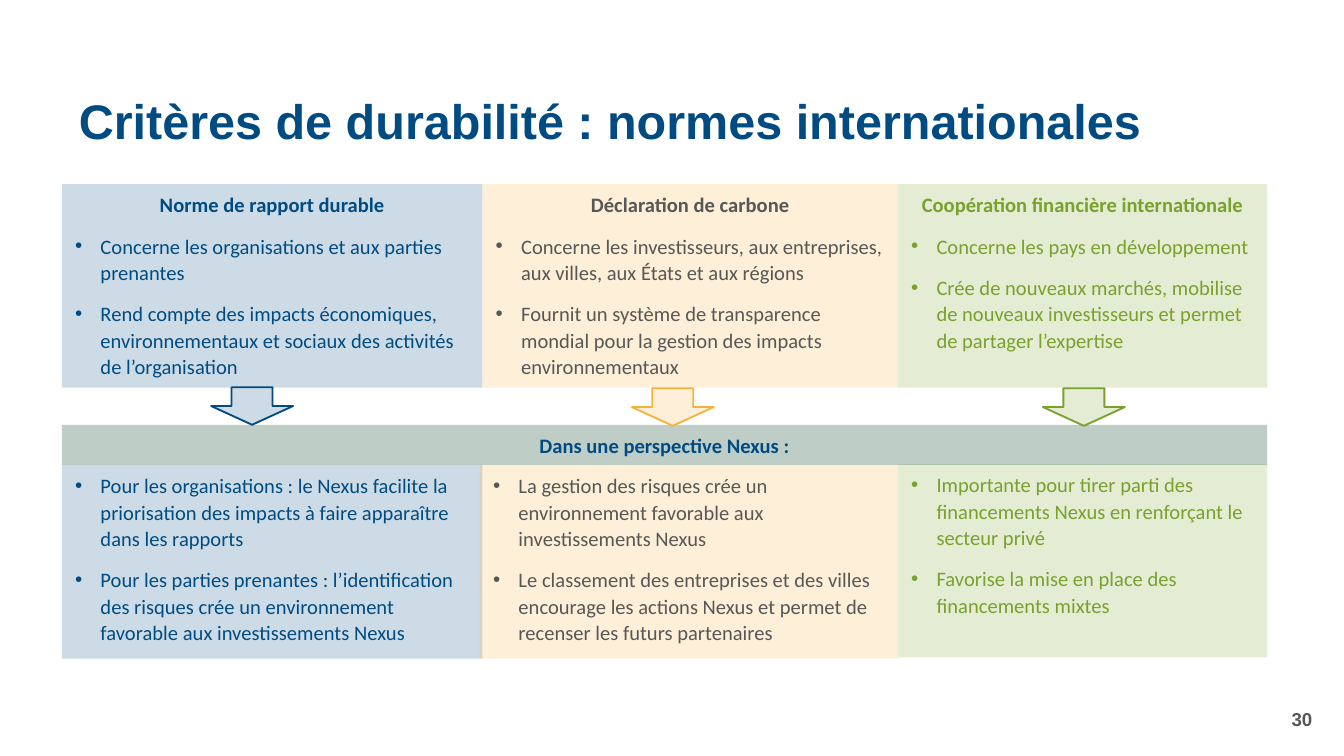
from dataclasses import dataclass

from lxml.etree import SubElement
from pptx import Presentation
from pptx.dml.color import RGBColor
from pptx.enum.shapes import MSO_SHAPE as Shape
from pptx.enum.text import MSO_ANCHOR as Anchor, PP_ALIGN as Align
from pptx.oxml.ns import qn
from pptx.util import Cm, Pt


@dataclass(frozen=True)
class Theme:
    blue: str = "004C82"
    amber: str = "F6B33C"
    green: str = "79A12C"
    grey: str = "575756"
    sage: str = "5F8475"
    title_font: str = "Arial"
    body_font: str = "Calibri"
    title_size: int = 26
    body_size: int = 11
    number_size: int = 10


THEME = Theme()

TITLE = "Critères de durabilité : normes internationales"
PAGE_NUMBER = "30"
NEXUS_HEADING = "Dans une perspective Nexus :"

STANDARDS = [
    {
        "name": "Norme de rapport durable",
        "tint": THEME.blue, "ink": THEME.blue,
        "left": 1.17, "nexus_left": 1.17, "right": 9.12,
        "arrow": (3.99, 7.32), "nexus_top": 8.79,
        "scope": [
            "Concerne les organisations et aux parties prenantes",
            "Rend compte des impacts économiques, environnementaux et sociaux "
            "des activités de l’organisation",
        ],
        "nexus": [
            "Pour les organisations : le Nexus facilite la priorisation des "
            "impacts à faire apparaître dans les rapports",
            "Pour les parties prenantes : l’identification des risques crée un "
            "environnement favorable aux investissements Nexus",
        ],
    },
    {
        "name": "Déclaration de carbone",
        "tint": THEME.amber, "ink": THEME.grey,
        "left": 9.12, "nexus_left": 9.07, "right": 16.97,
        "arrow": (11.94, 7.34), "nexus_top": 8.79,
        "scope": [
            "Concerne les investisseurs, aux entreprises, aux villes, aux États "
            "et aux régions",
            "Fournit un système de transparence mondial pour la gestion des "
            "impacts environnementaux",
        ],
        "nexus": [
            "La gestion des risques crée un environnement favorable aux "
            "investissements Nexus",
            "Le classement des entreprises et des villes encourage les actions "
            "Nexus et permet de recenser les futurs partenaires",
        ],
    },
    {
        "name": "Coopération financière internationale",
        "tint": THEME.green, "ink": THEME.green,
        "left": 16.97, "nexus_left": 16.97, "right": 23.95,
        "arrow": (19.71, 7.34), "nexus_top": 8.77,
        "scope": [
            "Concerne les pays en développement",
            "Crée de nouveaux marchés, mobilise de nouveaux investisseurs et "
            "permet de partager l’expertise",
        ],
        "nexus": [
            "Importante pour tirer parti des financements Nexus en renforçant "
            "le secteur privé",
            "Favorise la mise en place des financements mixtes",
        ],
    },
]

SCOPE_TOP, SCOPE_HEIGHT = 3.48, 3.85
BAND_TOP, BAND_HEIGHT = 8.03, 0.76
NEXUS_HEIGHT = 3.66
ARROW_WIDTH, ARROW_HEIGHT = 1.55, 0.71
BULLET_INDENT = Cm(0.48)


def style(paragraph, font, size, ink, bold):
    for run in paragraph.runs:
        run.font.name = font
        run.font.size = Pt(size)
        run.font.bold = bold
        run.font.color.rgb = RGBColor.from_string(ink)


def add_label(slide, text, box, size, ink, align):
    label = slide.shapes.add_textbox(*map(Cm, box))
    frame = label.text_frame
    frame.word_wrap = True
    frame.vertical_anchor = Anchor.MIDDLE
    frame.text = text
    paragraph = frame.paragraphs[0]
    paragraph.alignment = align
    style(paragraph, THEME.title_font, size, ink, True)
    return paragraph


def add_tinted(slide, kind, box, tint, opacity=20):
    """Add a translucent shape without outline; opacity is a percentage."""
    shape = slide.shapes.add_shape(kind, *map(Cm, box))
    shape.shadow.inherit = False
    shape.fill.solid()
    shape.fill.fore_color.rgb = RGBColor.from_string(tint)
    color = shape.fill._xPr.find(qn("a:solidFill"))[0]
    SubElement(color, qn("a:alpha")).set("val", str(opacity * 1000))
    shape.line.fill.background()
    return shape


def add_bullet(paragraph):
    properties = paragraph._p.get_or_add_pPr()
    properties.set("marL", str(BULLET_INDENT))
    properties.set("indent", str(-BULLET_INDENT))
    SubElement(properties, qn("a:buFont")).set("typeface", "Arial")
    SubElement(properties, qn("a:buChar")).set("char", "•")


def write(shape, ink, heading=None, bullets=()):
    frame = shape.text_frame
    frame.word_wrap = True
    frame.vertical_anchor = Anchor.TOP
    lines = ([heading] if heading else []) + list(bullets)
    frame.text = "\n".join(lines)
    for paragraph, line in zip(frame.paragraphs, lines):
        is_heading = line == heading
        paragraph.line_spacing = 1.07
        paragraph.space_after = Pt(8)
        paragraph.alignment = Align.CENTER if is_heading else Align.LEFT
        if not is_heading:
            add_bullet(paragraph)
        style(paragraph, THEME.body_font, THEME.body_size, ink, is_heading)


def main():
    deck = Presentation()
    deck.slide_width, deck.slide_height = Cm(25.4), Cm(14.29)
    slide = deck.slides.add_slide(deck.slide_layouts[6])

    title = add_label(slide, TITLE, (1.24, 1.6, 23.8, 1.5),
                      THEME.title_size, THEME.blue, Align.LEFT)
    title.line_spacing = 0.9
    add_label(slide, PAGE_NUMBER, (19.33, 13.21, 5.72, 0.76),
              THEME.number_size, THEME.grey, Align.RIGHT)

    for standard in STANDARDS:
        tint, ink, right = standard["tint"], standard["ink"], standard["right"]
        left, nexus_left = standard["left"], standard["nexus_left"]

        scope = add_tinted(slide, Shape.RECTANGLE,
                           (left, SCOPE_TOP, right - left, SCOPE_HEIGHT), tint)
        write(scope, ink, standard["name"], standard["scope"])

        nexus = add_tinted(slide, Shape.RECTANGLE,
                           (nexus_left, standard["nexus_top"],
                            right - nexus_left, NEXUS_HEIGHT), tint)
        write(nexus, ink, bullets=standard["nexus"])

    band_left, band_right = STANDARDS[0]["left"], STANDARDS[-1]["right"]
    band = add_tinted(slide, Shape.RECTANGLE,
                      (band_left, BAND_TOP, band_right - band_left, BAND_HEIGHT),
                      THEME.sage, opacity=40)
    write(band, THEME.blue, NEXUS_HEADING)

    for standard in STANDARDS:
        arrow = add_tinted(slide, Shape.DOWN_ARROW,
                           (*standard["arrow"], ARROW_WIDTH, ARROW_HEIGHT),
                           standard["tint"])
        arrow.line.color.rgb = RGBColor.from_string(standard["tint"])
        arrow.line.width = Pt(1)

    deck.save("out.pptx")


if __name__ == "__main__":
    main()
